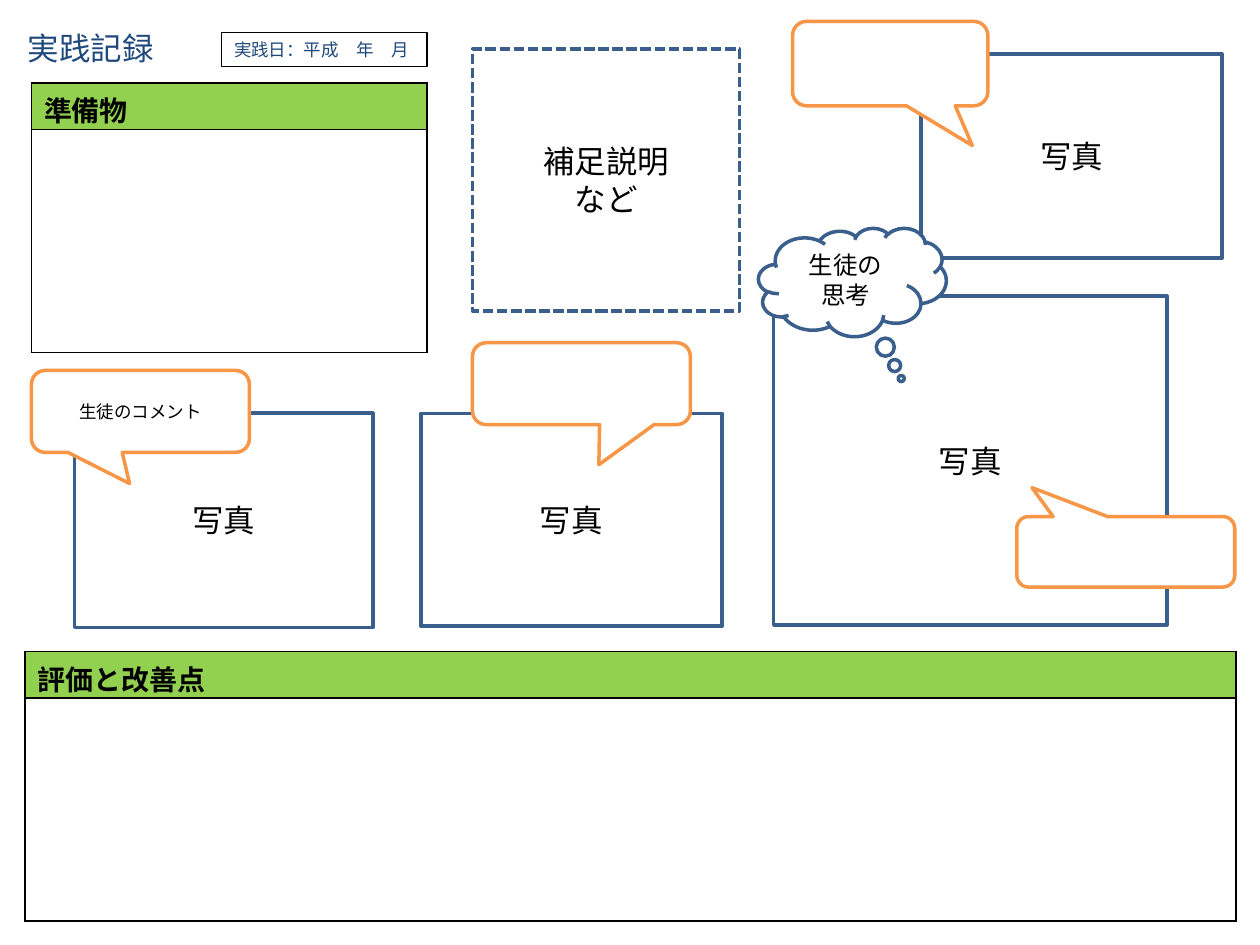
from lxml import etree
from pptx import Presentation
from pptx.dml.color import RGBColor
from pptx.enum.dml import MSO_LINE
from pptx.enum.shapes import MSO_SHAPE
from pptx.enum.text import MSO_ANCHOR, MSO_AUTO_SIZE, PP_ALIGN
from pptx.oxml.ns import qn
from pptx.util import Inches, Pt

RECT = MSO_SHAPE.RECTANGLE
SPEECH = MSO_SHAPE.ROUNDED_RECTANGULAR_CALLOUT
CLOUD = MSO_SHAPE.CLOUD_CALLOUT
DASH = MSO_LINE.SQUARE_DOT  # written as sysDot's sibling sysDash below
DASH = MSO_LINE.SQUARE_DOT if not hasattr(MSO_LINE, "SYS_DASH") else MSO_LINE.SYS_DASH
CENTER, LEFT = PP_ALIGN.CENTER, PP_ALIGN.LEFT
MIDDLE, TOP = MSO_ANCHOR.MIDDLE, MSO_ANCHOR.TOP

BLACK = RGBColor(0x00, 0x00, 0x00)
WHITE = RGBColor(0xFF, 0xFF, 0xFF)
BLUE = RGBColor(0x3A, 0x5F, 0x8C)
NAVY = RGBColor(0x1F, 0x49, 0x7D)
ORANGE = RGBColor(0xF7, 0x96, 0x46)
GREEN = RGBColor(0x92, 0xD0, 0x50)

prs = Presentation()
prs.slide_width, prs.slide_height = Inches(10), Inches(7.5)
slide = prs.slides.add_slide(prs.slide_layouts[6])


def add_box(kind, place, line, lines=(), size=18, color=BLACK, fill=None,
            width=2, align=CENTER, anchor=MIDDLE, adjust=()):
    box = slide.shapes.add_shape(kind, *map(Inches, place))
    box.shadow.inherit = False
    if fill is None:
        box.fill.background()
    else:
        box.fill.solid()
        box.fill.fore_color.rgb = fill
    box.line.color.rgb = line
    box.line.width = Pt(width)
    for i, value in enumerate(adjust):
        box.adjustments[i] = value
    frame = box.text_frame
    frame.word_wrap = True
    frame.vertical_anchor = anchor
    for i, text in enumerate(lines):
        paragraph = frame.add_paragraph() if i else frame.paragraphs[0]
        paragraph.alignment = align
        run = paragraph.add_run()
        run.text = text
        run.font.size, run.font.name = Pt(size), "Arial"
        run.font.color.rgb = color
    return box


def add_section(left, top, width, heading):
    heights = (0.37, 1.77)
    table = slide.shapes.add_table(2, 1, *map(Inches, (left, top, width, sum(heights)))).table
    for row, height, fill in zip(table.rows, heights, (GREEN, WHITE)):
        row.height = Inches(height)
        cell = row.cells[0]
        cell.margin_left = cell.margin_right = Inches(0.1)
        cell.margin_top = cell.margin_bottom = Inches(0.05)
        # Borders come before the fill in the cell properties
        properties = cell._tc.get_or_add_tcPr()
        for side in ("lnL", "lnR", "lnT", "lnB"):
            border = etree.SubElement(properties, qn(f"a:{side}"), w=str(Pt(1)))
            solid = etree.SubElement(border, qn("a:solidFill"))
            etree.SubElement(solid, qn("a:srgbClr"), val=str(BLACK))
        cell.fill.solid()
        cell.fill.fore_color.rgb = fill
    run = table.cell(0, 0).text_frame.paragraphs[0].add_run()
    run.text = heading
    run.font.size, run.font.name, run.font.bold = Pt(16), "DejaVu Sans", True
    run.font.color.rgb = BLACK


# Photo frames
for place in ((0.59, 3.28, 2.37, 1.7), (6.14, 2.35, 3.12, 2.61),
              (3.34, 3.28, 2.39, 1.69), (7.31, 0.43, 2.39, 1.62)):
    add_box(RECT, place, BLUE, ["写真"])

# Title
title = slide.shapes.add_textbox(*map(Inches, (0.12, 0.18, 1.21, 0.4))).text_frame
title.word_wrap = False
title.auto_size = MSO_AUTO_SIZE.SHAPE_TO_FIT_TEXT
title_run = title.paragraphs[0].add_run()
title_run.text = "実践記録"
title_run.font.size, title_run.font.name = Pt(18), "Arial"
title_run.font.color.rgb = NAVY

# Date field
date = add_box(RECT, (1.76, 0.26, 1.63, 0.27), BLACK, ["実践日：平成　年　月"], size=10,
               color=NAVY, width=0.75, align=LEFT, anchor=TOP)
date.text_frame.auto_size = MSO_AUTO_SIZE.SHAPE_TO_FIT_TEXT

# Headed sections
add_section(0.2, 5.17, 9.61, "評価と改善点")
add_section(0.25, 0.66, 3.14, "準備物")

# Student speech bubbles, with the offset of each tip
for place, tip, comment in (
    ((8.07, 4.1, 1.73, 0.56), (-0.43, -0.91), []),
    ((6.29, 0.17, 1.55, 0.67), (0.42, 0.97), []),
    ((3.75, 2.72, 1.73, 0.65), (0.08, 0.99), []),
    ((0.25, 2.94, 1.73, 0.65), (-0.05, 0.88), ["生徒のコメント"]),
):
    add_box(SPEECH, place, ORANGE, comment, size=10, fill=WHITE, adjust=tip)

# Supplementary notes
notes = add_box(RECT, (3.75, 0.39, 2.12, 2.08), BLUE, ["補足説明", "など"])
notes.line.dash_style = DASH
notes.line._ln.find(qn("a:prstDash")).set("val", "sysDash")

# Student thought
add_box(CLOUD, (6.02, 1.81, 1.49, 0.86), BLUE, ["生徒の思考"], size=14, fill=WHITE,
        adjust=(0.26, 0.89))

prs.save("out.pptx")
